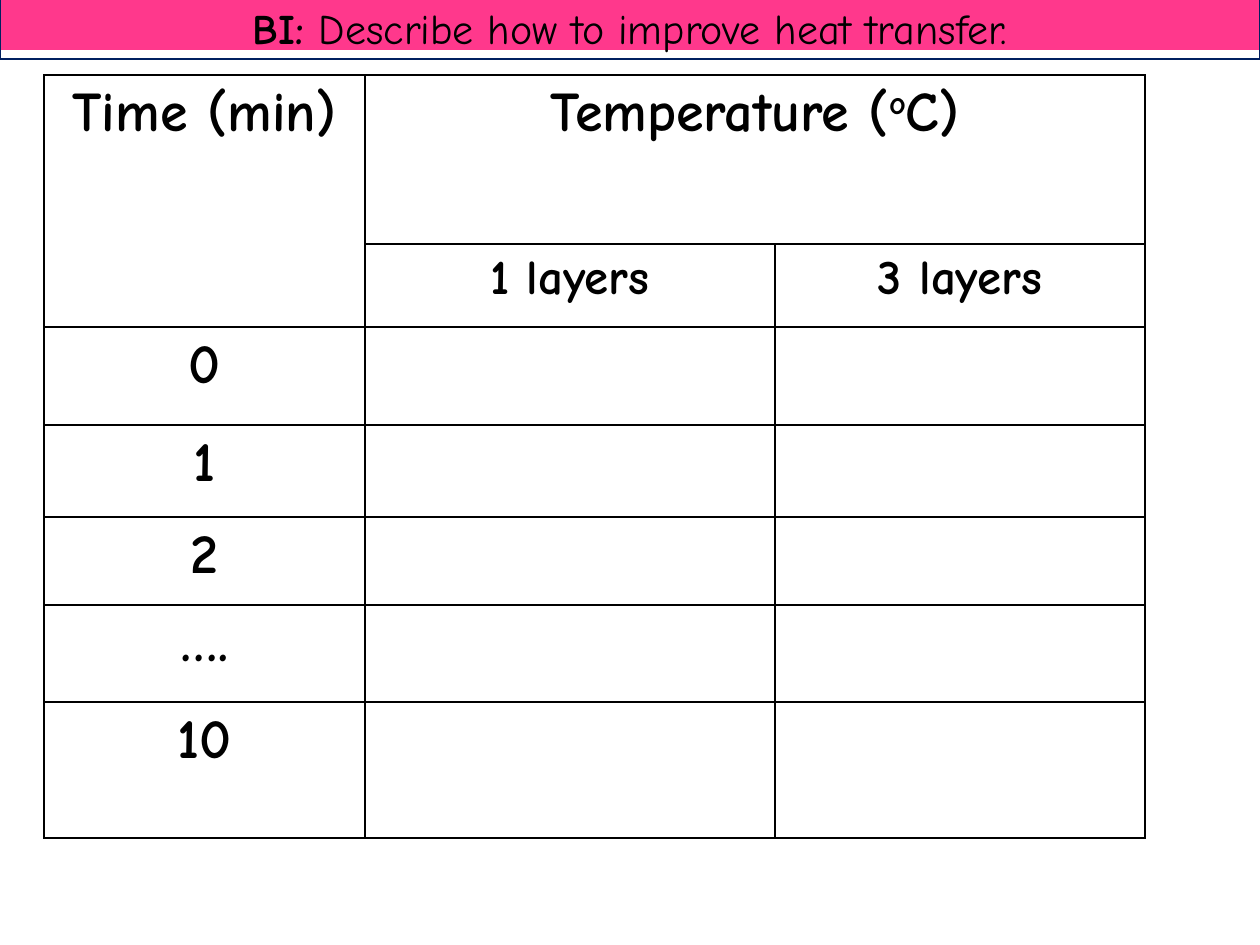
from dataclasses import dataclass

from lxml import etree
from pptx import Presentation
from pptx import util as u
from pptx.dml import color
from pptx.enum import shapes, text
from pptx.oxml import ns

PX = 914400 / 126


@dataclass(frozen=True)
class Theme:
    font: str = "Comic Neue"
    band: str = "FF388C"
    outline: str = "002060"
    ink: str = "000000"
    banner_pt: int = 24
    heading_pt: int = 32
    layer_pt: int = 28
    outline_pt: float = 0.75
    grid_pt: int = 1


@dataclass(frozen=True)
class Run:
    text: str
    bold: bool = True
    baseline: int = 0


@dataclass(frozen=True)
class Entry:
    row: int
    col: int
    runs: tuple[Run, ...]
    size: int
    row_span: int = 1
    col_span: int = 1


THEME = Theme()
COLUMNS = (321, 410, 370)
ROWS = (169, 83, 98, 92, 88, 97, 136)
TABLE_HEIGHT = 775
TIMES = ("0", "1", "2", "….", "10")
LAYERS = ("1 layers", "3 layers")
ENTRIES = [
    Entry(0, 0, (Run("Time (min)"),), THEME.heading_pt, row_span=2),
    Entry(0, 1, (Run("Temperature ("), Run("o", baseline=30000), Run("C)")),
          THEME.heading_pt, col_span=2),
    *(Entry(1, i, (Run(name),), THEME.layer_pt) for i, name in enumerate(LAYERS, 1)),
    *(Entry(i, 0, (Run(time),), THEME.heading_pt) for i, time in enumerate(TIMES, 2)),
]


def px(n: int) -> u.Emu:
    return u.Emu(round(n * PX))


def rgb(value: str) -> color.RGBColor:
    return color.RGBColor.from_string(value)


def write(tf, runs: tuple[Run, ...], size: int) -> None:
    p = tf.paragraphs[0]
    p.alignment = text.PP_ALIGN.CENTER
    for run in runs:
        r = p.add_run()
        r.text = run.text
        r.font.name = THEME.font
        r.font.size = u.Pt(size)
        r.font.bold = run.bold
        r.font.color.rgb = rgb(THEME.ink)
        if run.baseline:
            r.font._element.set("baseline", str(run.baseline))


def add_banner(s) -> None:
    band = s.shapes.add_shape(shapes.MSO_SHAPE.RECTANGLE, 0, 0, px(1260), px(50))
    band.shadow.inherit = False
    band.fill.solid()
    band.fill.fore_color.rgb = rgb(THEME.band)
    band.line.fill.background()

    sp = s.shapes.add_textbox(0, px(-4), px(1260), px(63))
    sp.line.color.rgb = rgb(THEME.outline)
    sp.line.width = u.Pt(THEME.outline_pt)
    tf = sp.text_frame
    tf.word_wrap = True
    tf.auto_size = text.MSO_AUTO_SIZE.SHAPE_TO_FIT_TEXT
    write(tf, (Run("BI: "), Run("Describe how to improve heat transfer.", bold=False)),
          THEME.banner_pt)


def style_cell(cell) -> None:
    props = cell._tc.get_or_add_tcPr()
    for side in ("a:lnL", "a:lnR", "a:lnT", "a:lnB"):
        line = etree.SubElement(props, ns.qn(side), w=str(u.Pt(THEME.grid_pt)))
        fill = etree.SubElement(line, ns.qn("a:solidFill"))
        etree.SubElement(fill, ns.qn("a:srgbClr"), val=THEME.ink)
    cell.fill.background()


def add_results_table(s) -> None:
    frame = s.shapes.add_table(len(ROWS), len(COLUMNS), px(44), px(75),
                               px(sum(COLUMNS)), px(TABLE_HEIGHT))
    table = frame.table
    table.first_row = False
    table.horz_banding = False
    for column, width in zip(table.columns, COLUMNS):
        column.width = px(width)
    for row, height in zip(table.rows, ROWS):
        row.height = px(height)
    frame.height = px(TABLE_HEIGHT)
    for cell in table.iter_cells():
        style_cell(cell)
    for entry in ENTRIES:
        cell = table.cell(entry.row, entry.col)
        if entry.row_span > 1 or entry.col_span > 1:
            cell.merge(table.cell(entry.row + entry.row_span - 1,
                                  entry.col + entry.col_span - 1))
        write(cell.text_frame, entry.runs, entry.size)


def main() -> None:
    prs = Presentation()
    prs.slide_width, prs.slide_height = px(1260), px(945)
    s = prs.slides.add_slide(prs.slide_layouts[6])
    add_banner(s)
    add_results_table(s)
    prs.save("out.pptx")


if __name__ == "__main__":
    main()
